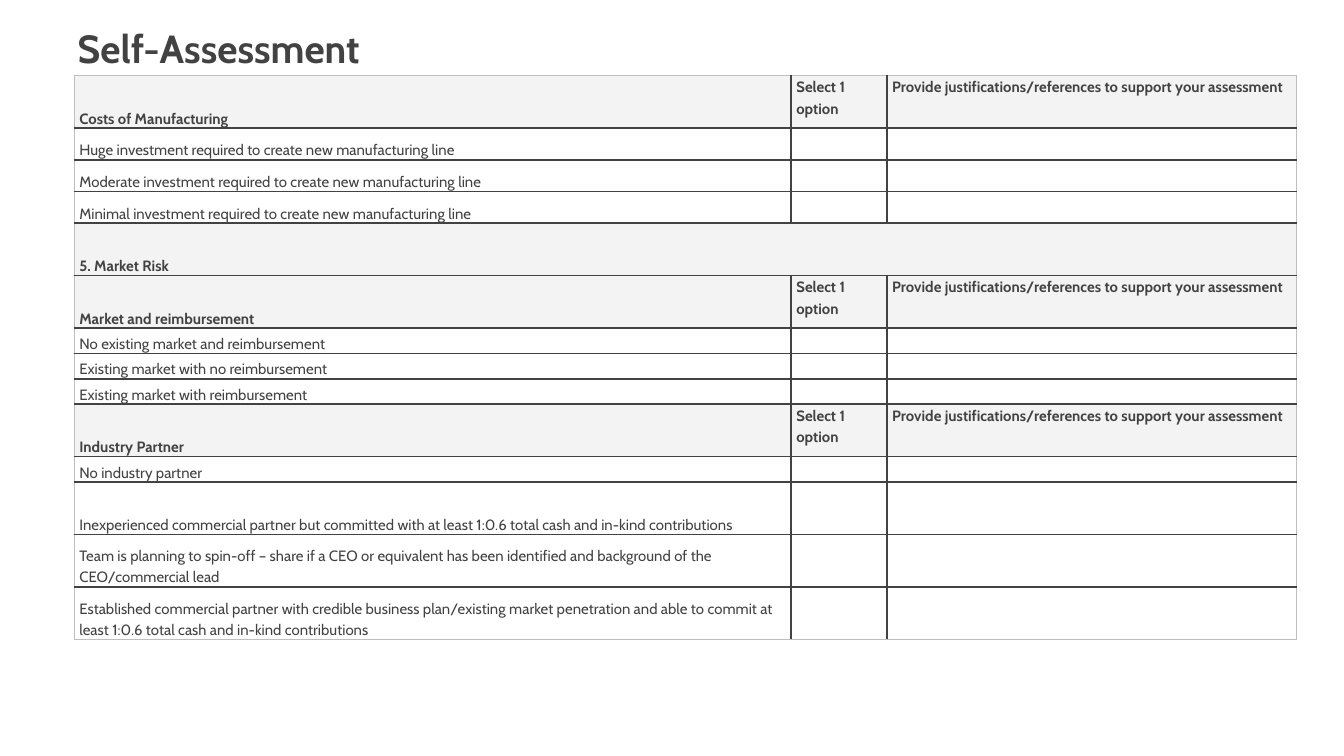
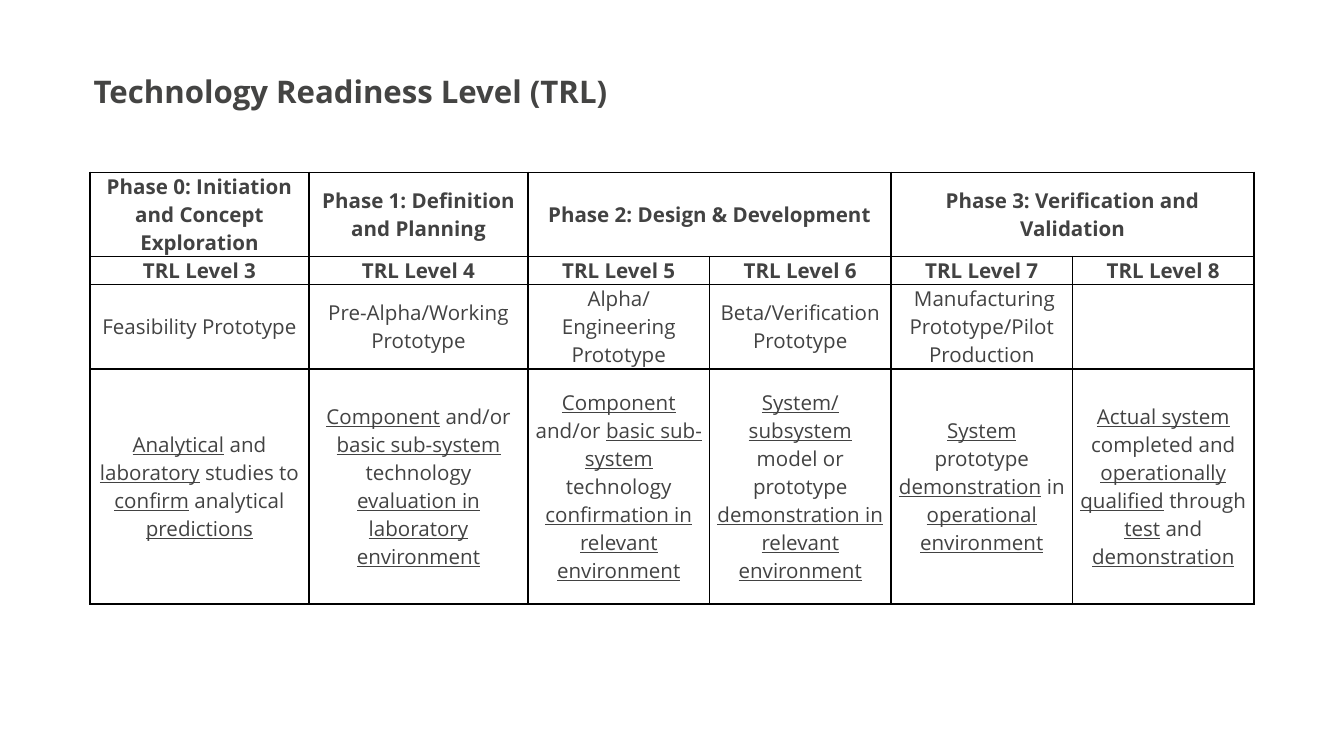
from lxml.etree import SubElement as Sub
from pptx import Presentation
from pptx.dml.color import RGBColor as RGB
from pptx.enum.text import MSO_ANCHOR as Anchor, PP_ALIGN as Align
from pptx.oxml.ns import qn
from pptx.util import Cm, Pt

INK = RGB(0x42, 0x42, 0x42)
HEAD = RGB(0x44, 0x44, 0x43)
SHADE = RGB(0xF3, 0xF3, 0xF3)
EDGE = RGB(0xBF, 0xBF, 0xBF)
BLACK = RGB(0, 0, 0)
WHITE = RGB(0xFF, 0xFF, 0xFF)


def write(para, text, ink, style, font):
    for key, val in style.items():
        setattr(para, key, val)
    for i, part in enumerate(text.split("_")):
        if part:
            run = para.add_run()
            run.text = part
            run.font.color.rgb = ink
            for key, val in font.items():
                setattr(run.font, key, val)
            if i % 2:
                run.font.underline = True
    if not text:
        Sub(para._p, qn("a:endParaRPr"), sz=str(int(font["size"].pt * 100)))


def grid(slide, left, top, cols, rows, spans, pad, line, edge, thin):
    frame = slide.shapes.add_table(len(rows), len(cols), Cm(left), Cm(top),
                                   Cm(sum(cols)), Cm(sum(rows)))
    table = frame.table
    table.first_row = table.horz_banding = False
    for col, size in zip(table.columns, cols):
        col.width = Cm(size)
    for row, size in zip(table.rows, rows):
        row.height = Cm(size)
    for r, start, end in spans:
        table.cell(r, start).merge(table.cell(r, end))
    box = {"margin_left": Cm(pad), "margin_right": Cm(pad), "margin_top": 0, "margin_bottom": 0}
    for r in range(len(rows)):
        for c in range(len(cols)):
            cell = table.cell(r, c)
            for key, val in box.items():
                setattr(cell, key, val)
            last = c + (cell.span_width if cell.is_merge_origin else 1)
            sides = {"L": c == 0, "R": last == len(cols), "T": r == 0, "B": r == len(rows) - 1}
            for side, outer in sides.items():
                ln = Sub(cell._tc.get_or_add_tcPr(), qn("a:ln" + side),
                         w=str(Pt(thin if outer else 1)))
                fill = Sub(ln, qn("a:solidFill"))
                Sub(fill, qn("a:srgbClr"), val=str(edge if outer else line))
            cell.fill.background()
    return table


deck = Presentation()
deck.slide_width, deck.slide_height = Cm(25.4), Cm(14.29)

titles = [
    ("Self-Assessment", (1.22, 0.33, 18.26, 1.14), INK, {},
     {"name": "Cabin", "size": Pt(21), "bold": True}),
    ("Technology Readiness Level (TRL)", (1.52, 0.99, 22.4, 1.17), HEAD, {"line_spacing": 1.4},
     {"name": "Open Sans", "size": Pt(16.7), "bold": True}),
]
slides = []
for text, place, ink, style, font in titles:
    slide = deck.slides.add_slide(deck.slide_layouts[6])
    slide.background.fill.solid()
    slide.background.fill.fore_color.rgb = WHITE
    frame = slide.shapes.add_textbox(*map(Cm, place)).text_frame
    setup = {"word_wrap": True, "vertical_anchor": Anchor.MIDDLE, "margin_top": 0, "margin_bottom": 0}
    for key, val in setup.items():
        setattr(frame, key, val)
    write(frame.paragraphs[0], text, ink, style, font)
    slides.append(slide)

TALL, MID, LOW = 0.99, 0.6, 0.48
asks = ["Select 1 option", "Provide justifications/references to support your assessment"]
lines = [
    ("head", TALL, "Costs of Manufacturing"),
    ("item", MID, "Huge investment required to create new manufacturing line"),
    ("item", MID, "Moderate investment required to create new manufacturing line"),
    ("item", MID, "Minimal investment required to create new manufacturing line"),
    ("part", TALL, "5. Market Risk"),
    ("head", TALL, "Market and reimbursement"),
    ("item", LOW, "No existing market and reimbursement"),
    ("item", LOW, "Existing market with no reimbursement"),
    ("item", LOW, "Existing market with reimbursement"),
    ("head", TALL, "Industry Partner"),
    ("item", LOW, "No industry partner"),
    ("item", TALL, "Inexperienced commercial partner but committed with at least 1:0.6 total cash "
                   "and in-kind contributions"),
    ("item", TALL, "Team is planning to spin-off – share if a CEO or equivalent has been identified "
                   "and background of the CEO/commercial lead"),
    ("item", TALL, "Established commercial partner with credible business plan/existing market "
                   "penetration and able to commit at least 1:0.6 total cash and in-kind contributions"),
]
form = grid(slides[0], 1.4, 1.43, [13.55, 1.81, 7.75], [size for _, size, _ in lines],
            [(4, 0, 2)], 0.1, INK, EDGE, 0.5)
style = {"line_spacing": 1.15, "space_after": Pt(10)}
for r, (kind, _, label) in enumerate(lines):
    texts = [label] + (asks if kind == "head" else ["", ""])
    font = {"name": "Cabin", "size": Pt(8), "bold": kind != "item"}
    for c, text in enumerate(texts):
        cell = form.cell(r, c)
        cell.vertical_anchor = Anchor.TOP if c else Anchor.BOTTOM
        if kind != "item":
            cell.fill.solid()
            cell.fill.fore_color.rgb = SHADE
        write(cell.text_frame.paragraphs[0], text, INK, style, font)

levels = [
    ["Phase 0: Initiation and Concept Exploration", "Phase 1: Definition and Planning",
     "Phase 2: Design & Development", "", "Phase 3: Verification and Validation", ""],
    [f"TRL Level {n}" for n in range(3, 9)],
    ["Feasibility Prototype", "Pre-Alpha/Working Prototype", "Alpha/Engineering Prototype",
     "Beta/Verification Prototype", " Manufacturing Prototype/Pilot Production", ""],
    ["_Analytical_ and _laboratory_ studies to _confirm_ analytical _predictions_",
     "_Component_ and/or _basic sub-system_ technology _evaluation in laboratory_ _environment_",
     "_Component_ and/or _basic sub-system_ technology _confirmation in relevant_ _environment_",
     "_System/ subsystem_ model or prototype_ demonstration in relevant environment_",
     "_System_ prototype _demonstration_ in _operational environment_",
     "_Actual system_ completed and _operationally qualified_ through _test_ and _demonstration_"],
]
chart = grid(slides[1], 1.7, 3.26, [4.14] * 2 + [3.43] * 4, [1.59, 0.53, 1.59, 4.45],
             [(0, 2, 3), (0, 4, 5)], 0.13, BLACK, BLACK, 1)
for r, texts in enumerate(levels):
    font = {"name": "Open Sans", "size": Pt(11), "bold": r < 2}
    for c, text in enumerate(texts):
        cell = chart.cell(r, c)
        cell.vertical_anchor = Anchor.MIDDLE
        write(cell.text_frame.paragraphs[0], text, INK, {"alignment": Align.CENTER}, font)

deck.save("out.pptx")
